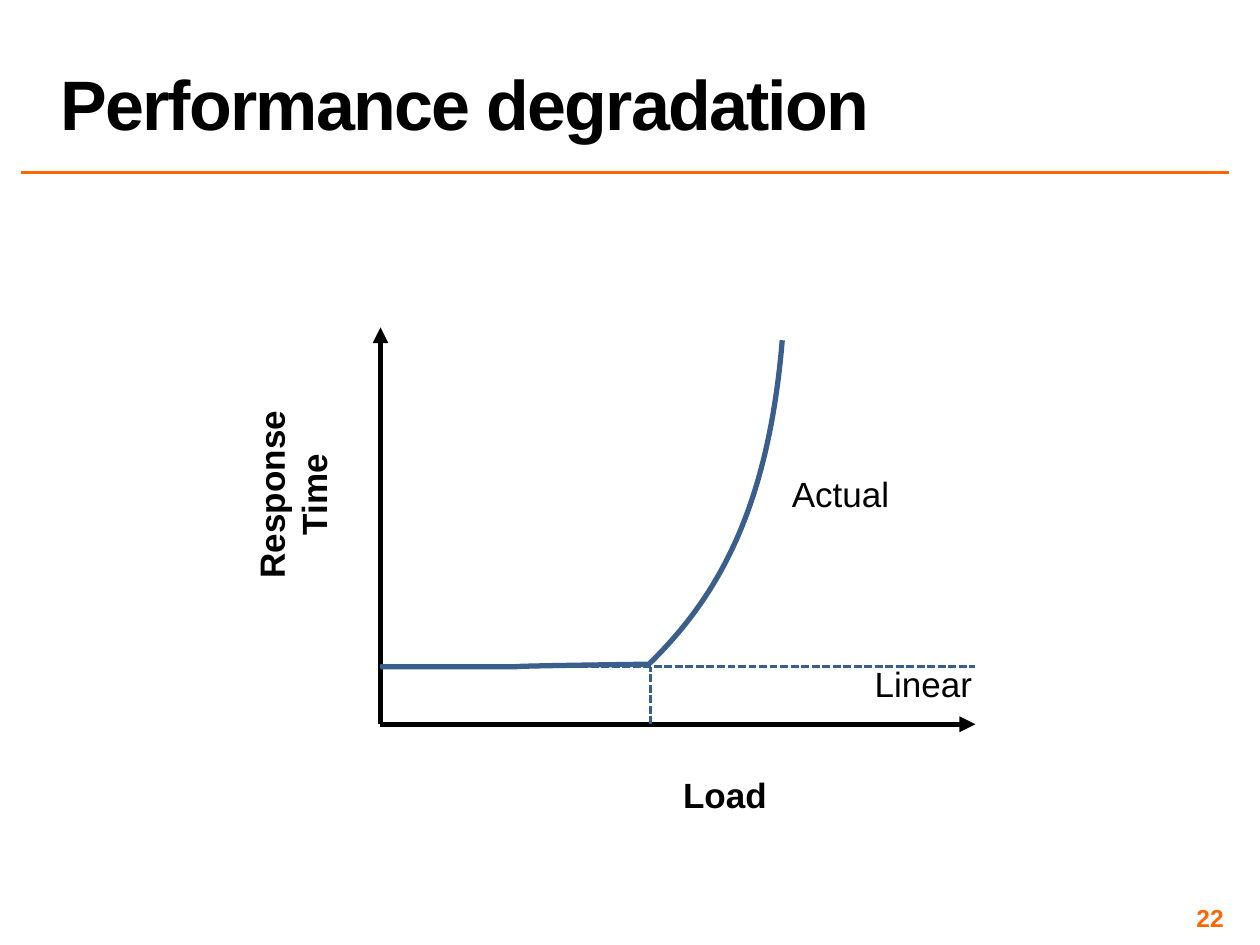
from lxml import etree
from pptx import Presentation
from pptx.dml.color import RGBColor
from pptx.enum.dml import MSO_LINE
from pptx.enum.shapes import MSO_CONNECTOR
from pptx.enum.text import MSO_ANCHOR, MSO_AUTO_SIZE, PP_ALIGN
from pptx.oxml.ns import qn
from pptx.util import Cm, Pt

STRAIGHT = MSO_CONNECTOR.STRAIGHT
DASH = MSO_LINE.SQUARE_DOT
TOP, MIDDLE, BOTTOM = MSO_ANCHOR.TOP, MSO_ANCHOR.MIDDLE, MSO_ANCHOR.BOTTOM
LEFT, CENTER, RIGHT = PP_ALIGN.LEFT, PP_ALIGN.CENTER, PP_ALIGN.RIGHT
FIT_SHAPE = MSO_AUTO_SIZE.SHAPE_TO_FIT_TEXT

BLACK, ORANGE, BLUE = "000000", "FF6600", "3A5F8C"

# Chart geometry in centimetres
ORIGIN_X, ORIGIN_Y = 7.67, 14.6
AXIS_RIGHT, AXIS_TOP = 19.66, 6.6
LINEAR_Y = 13.44
KNEE_X = 13.11


def color(hex_string):
    return RGBColor.from_string(hex_string)


def add_text(slide, text, left, top, width, height, size=20, text_color=BLACK,
             bold=False, align=CENTER, anchor=TOP, wrap=False, inset=None,
             line_spacing=None, letter_spacing=None, rotation=0):
    """Add a text box; a vertical tab in the text is a line break."""
    shape = slide.shapes.add_textbox(Cm(left), Cm(top), Cm(width), Cm(height))
    shape.rotation = rotation
    frame = shape.text_frame
    frame.word_wrap = wrap
    frame.vertical_anchor = anchor
    if not wrap:
        frame.auto_size = FIT_SHAPE
    if inset is not None:
        frame.margin_left = frame.margin_right = Cm(inset)
        frame.margin_top = frame.margin_bottom = Cm(inset)
    paragraph = frame.paragraphs[0]
    paragraph.text = text
    paragraph.alignment = align
    if line_spacing:
        paragraph.line_spacing = line_spacing
    for run in paragraph.runs:
        run.font.name = "Arial"
        run.font.size = Pt(size)
        run.font.bold = bold
        run.font.color.rgb = color(text_color)
        if letter_spacing:
            run.font._element.set("spc", str(letter_spacing * 100))
    return shape


def add_line(slide, start, end, line_color, width, dash=None, arrow=False):
    connector = slide.shapes.add_connector(
        STRAIGHT, *(Cm(value) for value in (*start, *end)))
    connector.line.color.rgb = color(line_color)
    connector.line.width = Pt(width)
    if dash:
        connector.line.dash_style = dash
    if arrow:
        etree.SubElement(connector.line._get_or_add_ln(), qn("a:tailEnd"),
                         type="triangle")
    etree.SubElement(connector._element.spPr, qn("a:effectLst"))
    return connector


def add_curve(slide, points, line_color, width):
    """Draw cubic Bezier segments: a start, then three points a segment."""
    start, *others = [(Cm(x), Cm(y)) for x, y in points]
    builder = slide.shapes.build_freeform(*start)
    builder.add_line_segments(others, close=False)
    shape = builder.convert_to_shape()
    shape.shadow.inherit = False
    shape.fill.background()
    shape.line.color.rgb = color(line_color)
    shape.line.width = Pt(width)
    # Turn each three straight segments into one cubic segment
    segments = list(shape._element.iter(qn("a:lnTo")))
    for index in range(0, len(segments), 3):
        cubic = etree.Element(qn("a:cubicBezTo"))
        segments[index].addprevious(cubic)
        for segment in segments[index:index + 3]:
            cubic.append(segment[0])
            segment.getparent().remove(segment)
    return shape


def main():
    presentation = Presentation()
    presentation.slide_width, presentation.slide_height = Cm(25.4), Cm(19.05)
    slide = presentation.slides.add_slide(presentation.slide_layouts[6])

    # Heading, rule and page number
    add_line(slide, (0.43, 3.48), (24.77, 3.48), ORANGE, 2)
    add_text(slide, "22", 18.85, 18.21, 5.92, 0.58, size=14, text_color=ORANGE,
             bold=True, align=RIGHT, anchor=MIDDLE, wrap=True, inset=0.1)
    add_text(slide, "Performance degradation", 0.97, 0.05, 23.8, 2.97, size=40,
             bold=True, align=LEFT, anchor=BOTTOM, wrap=True,
             line_spacing=0.8, letter_spacing=-1)

    # Axes and their names
    origin = (ORIGIN_X, ORIGIN_Y)
    add_line(slide, origin, (AXIS_RIGHT, ORIGIN_Y), BLACK, 3, arrow=True)
    add_text(slide, "Load", 13.51, 15.47, 2.21, 1.12, bold=True)
    add_line(slide, origin, (ORIGIN_X, AXIS_TOP), BLACK, 3, arrow=True)
    add_text(slide, "Response\vTime", 3.94, 8.99, 3.91, 1.96, bold=True,
             rotation=270)

    # Linear guide, knee marker and actual response
    add_line(slide, (ORIGIN_X, LINEAR_Y), (AXIS_RIGHT, LINEAR_Y), BLUE, 1.5, DASH)
    add_line(slide, (KNEE_X, ORIGIN_Y), (KNEE_X, LINEAR_Y), BLUE, 1.5, DASH)
    add_curve(slide, [(ORIGIN_X, LINEAR_Y),
                      (KNEE_X, LINEAR_Y), (7.72, 13.46), (13.08, 13.39),
                      (14.5, 12.01), (15.49, 10.21), (15.77, 6.86)], BLUE, 3)
    add_text(slide, "Linear", 17.37, 13.23, 2.49, 1.12)
    add_text(slide, "Actual", 15.7, 9.4, 2.49, 1.12)

    presentation.save("out.pptx")


if __name__ == "__main__":
    main()
